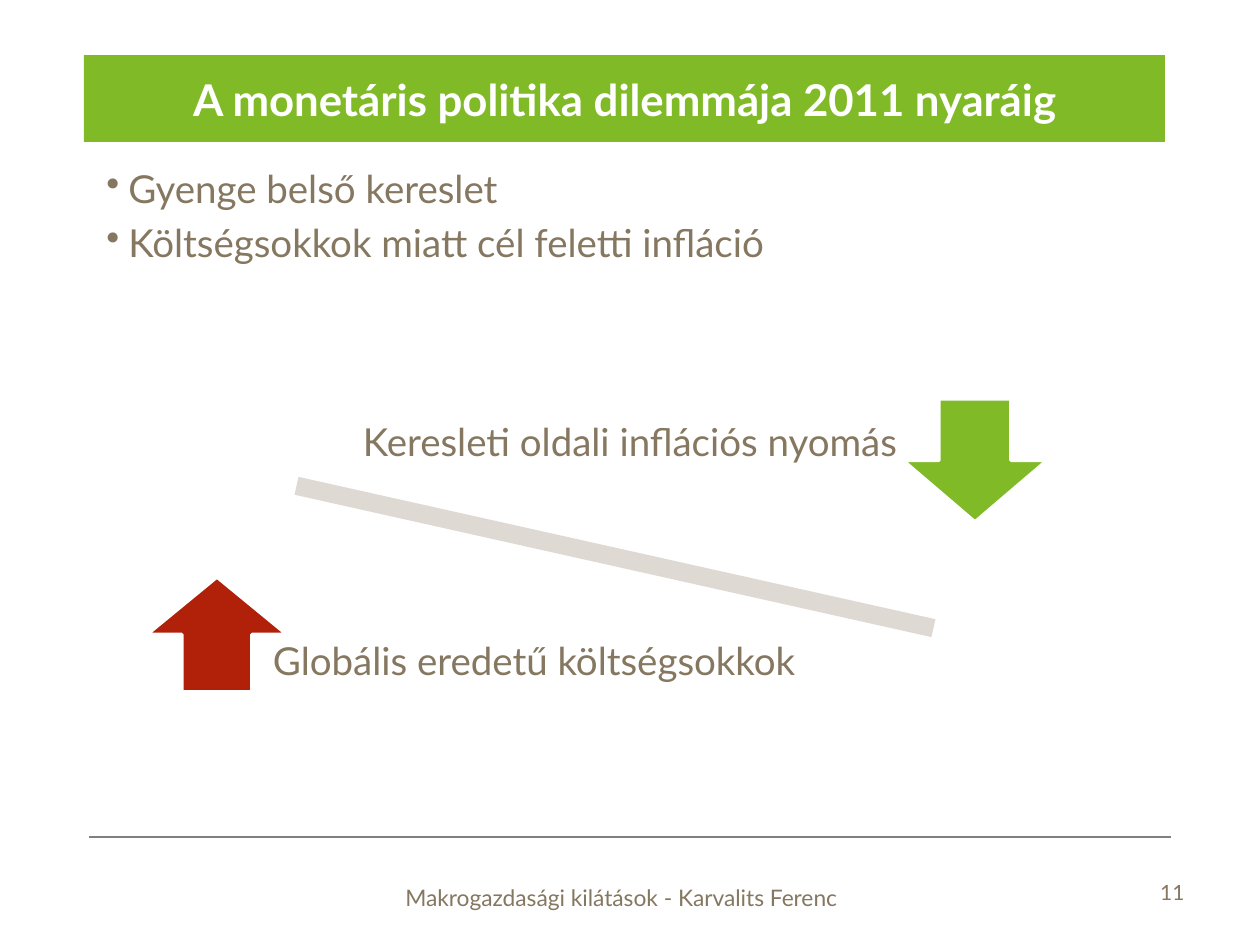
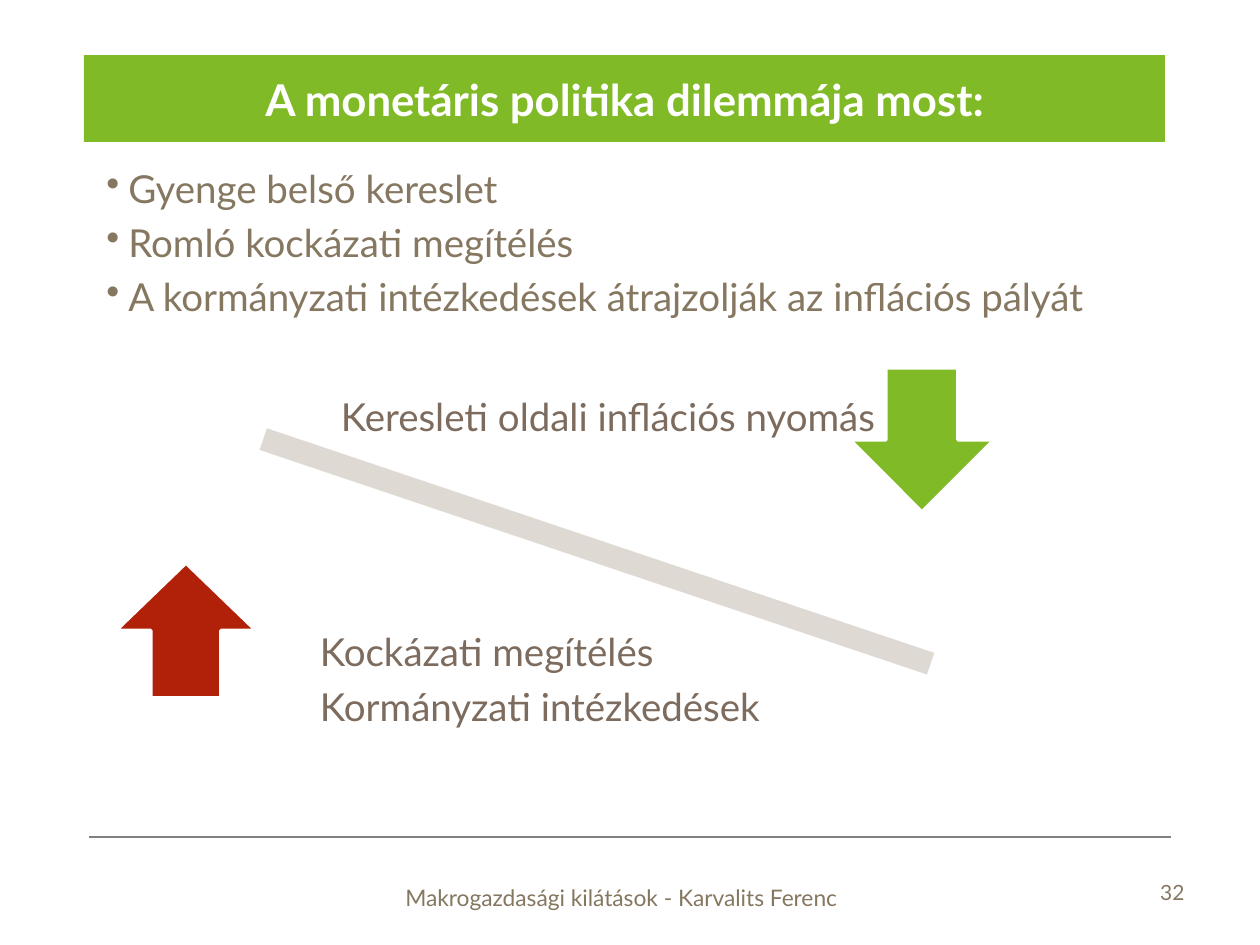
import pptx
import pptx.dml.color
import pptx.enum.shapes
import pptx.enum.text
import pptx.oxml.ns
import pptx.util
from lxml import etree

EMU_PER_PX = 914400 / 126
SLIDE_SIZE = (1260, 945)
FONT = "Lato"
COLOURS = {
    "green": "80BA27",
    "red": "B12009",
    "beam": "DFD9D4",
    "brown": "857760",
    "dark_brown": "7D6B5D",
    "rule": "808080",
    "white": "FFFFFF",
}

TITLE_BOX = (84, 55, 1081, 87)
POINTS_BOX = (94, 159, 1081, 185)
FOOTER_BOX = (89, 837, 1082, 80)
BULLET_INDENT = 22
LABEL_INSET = 21

SHAPES = pptx.enum.shapes.MSO_SHAPE
ALIGN = pptx.enum.text.PP_ALIGN
ANCHOR = pptx.enum.text.MSO_ANCHOR

BODY_FORMAT = {"space_before": pptx.util.Pt(4.4)}
LABEL_FORMAT = {"line_spacing": 0.9, "space_after": pptx.util.Pt(7.7)}

# Parts of each balance are (left, top, width, height) inside its box.
SLIDES = [
    {
        "number": "11",
        "title": "A monetáris politika dilemmája 2011 nyaráig",
        "points": ["Gyenge belső kereslet", "Költségsokkok miatt cél feletti infláció"],
        "balance_box": (134, 363, 962, 382),
        "balance": {
            "beam": (37, 155, 888, 78),
            "tilt": 12.6,
            "down_arrow": (769, 36, 144, 123),
            "down_label": (0, 0, 784, 163),
            "down_text": ["Keresleti oldali inflációs nyomás"],
            "up_arrow": (13, 214, 140, 115),
            "up_label": (118, 219, 844, 163),
            "up_text": ["Globális eredetű költségsokkok"],
            "colour": "brown",
        },
    },
    {
        "number": "32",
        "title": "A monetáris politika dilemmája most:",
        "points": [
            "Gyenge belső kereslet",
            "Romló kockázati megítélés",
            "A kormányzati intézkedések átrajzolják az inflációs pályát",
        ],
        "balance_box": (116, 325, 963, 451),
        "balance": {
            "beam": (2, 178, 958, 97),
            "tilt": 18.6,
            "down_arrow": (734, 43, 144, 144),
            "down_label": (0, 0, 780, 189),
            "down_text": ["Keresleti oldali inflációs nyomás"],
            "up_arrow": (0, 238, 140, 135),
            "up_label": (183, 262, 780, 189),
            "up_text": ["Kockázati megítélés", "Kormányzati intézkedések"],
            "colour": "dark_brown",
        },
    },
]


def px(length):
    return pptx.util.Emu(round(length * EMU_PER_PX))


def emu_box(box):
    return [px(length) for length in box]


def inside(box, part):
    """Move a part given relative to a box to its place on the slide."""
    return (box[0] + part[0], box[1] + part[1], part[2], part[3])


def rgb(colour):
    return pptx.dml.color.RGBColor.from_string(COLOURS[colour])


def apply_format(target, values):
    for attribute, value in values.items():
        setattr(target, attribute, value)


def write_text(frame, lines, size, colour, align=ALIGN.LEFT, anchor=ANCHOR.TOP,
               inset=None, bold=False, bulleted=False, paragraph_format=None):
    apply_format(frame, {
        "word_wrap": True,
        "auto_size": pptx.enum.text.MSO_AUTO_SIZE.NONE,
        "vertical_anchor": anchor,
    })
    if inset is not None:
        sides = ("left", "top", "right", "bottom")
        apply_format(frame, {f"margin_{side}": px(inset) for side in sides})
    for index, line in enumerate(lines):
        paragraph = frame.add_paragraph() if index else frame.paragraphs[0]
        paragraph.text = line
        paragraph.alignment = align
        apply_format(paragraph, paragraph_format or {})
        if index == 0:
            paragraph.space_before = pptx.util.Pt(0)
        if bulleted:
            add_bullet(paragraph)
        apply_format(paragraph.runs[0].font,
                     {"name": FONT, "size": pptx.util.Pt(size), "bold": bold})
        paragraph.runs[0].font.color.rgb = rgb(colour)


def add_bullet(paragraph):
    properties = paragraph._p.get_or_add_pPr()
    properties.set("marL", str(px(BULLET_INDENT)))
    properties.set("indent", str(-px(BULLET_INDENT)))
    etree.SubElement(properties, pptx.oxml.ns.qn("a:buChar"), char="•")


def add_text(slide, box, lines, size, colour, **text_format):
    frame = slide.shapes.add_textbox(*emu_box(box)).text_frame
    write_text(frame, lines, size, colour, **text_format)


def add_solid(slide, kind, box, colour, outlined=False):
    solid = slide.shapes.add_shape(kind, *emu_box(box))
    solid.shadow.inherit = False
    solid.fill.solid()
    solid.fill.fore_color.rgb = rgb(colour)
    if outlined:
        solid.line.color.rgb = rgb("white")
        solid.line.width = pptx.util.Pt(2)
    else:
        solid.line.fill.background()
    return solid


def add_title_band(slide, box, title):
    band = slide.shapes.title
    apply_format(band, dict(zip(("left", "top", "width", "height"), emu_box(box))))
    band.fill.solid()
    band.fill.fore_color.rgb = rgb("green")
    write_text(band.text_frame, [title], 25, "white", align=ALIGN.CENTER,
               anchor=ANCHOR.MIDDLE, bold=True)


def add_balance(slide, box, balance):
    """Tilted beam with a falling force on the right and a rising one on the left."""
    beam = add_solid(slide, SHAPES.MATH_MINUS, inside(box, balance["beam"]), "beam")
    beam.rotation = balance["tilt"]
    forces = (
        ("down", SHAPES.DOWN_ARROW, "green", ALIGN.RIGHT),
        ("up", SHAPES.UP_ARROW, "red", ALIGN.LEFT),
    )
    for force, arrow, colour, align in forces:
        add_solid(slide, arrow, inside(box, balance[f"{force}_arrow"]), colour,
                  outlined=True)
        add_text(slide, inside(box, balance[f"{force}_label"]),
                 balance[f"{force}_text"], 22, balance["colour"], align=align,
                 anchor=ANCHOR.MIDDLE, inset=LABEL_INSET,
                 paragraph_format=LABEL_FORMAT)


def add_footer(slide, box, number):
    left, top, width, _ = box
    rule = slide.shapes.add_connector(
        pptx.enum.shapes.MSO_CONNECTOR.STRAIGHT,
        px(left), px(top), px(left + width), px(top))
    rule.line.color.rgb = rgb("rule")
    rule.line.width = pptx.util.Pt(1)
    etree.SubElement(rule._element.spPr, pptx.oxml.ns.qn("a:effectLst"))
    add_text(slide, inside(box, (304, 30, 673, 50)),
             ["Makrogazdasági kilátások - Karvalits Ferenc"], 13, "brown",
             anchor=ANCHOR.BOTTOM)
    add_text(slide, inside(box, (1007, 30, 101, 50)), [number], 12, "brown",
             align=ALIGN.RIGHT, anchor=ANCHOR.MIDDLE)


def add_dilemma_slide(deck, content):
    slide = deck.slides.add_slide(deck.slide_layouts.get_by_name("Title Only"))
    add_title_band(slide, TITLE_BOX, content["title"])
    add_text(slide, POINTS_BOX, content["points"], 22, "brown", bulleted=True,
             paragraph_format=BODY_FORMAT)
    add_balance(slide, content["balance_box"], content["balance"])
    add_footer(slide, FOOTER_BOX, content["number"])


def main():
    deck = pptx.Presentation()
    deck.slide_width, deck.slide_height = emu_box(SLIDE_SIZE)
    for content in SLIDES:
        add_dilemma_slide(deck, content)
    deck.save("out.pptx")


if __name__ == "__main__":
    main()
